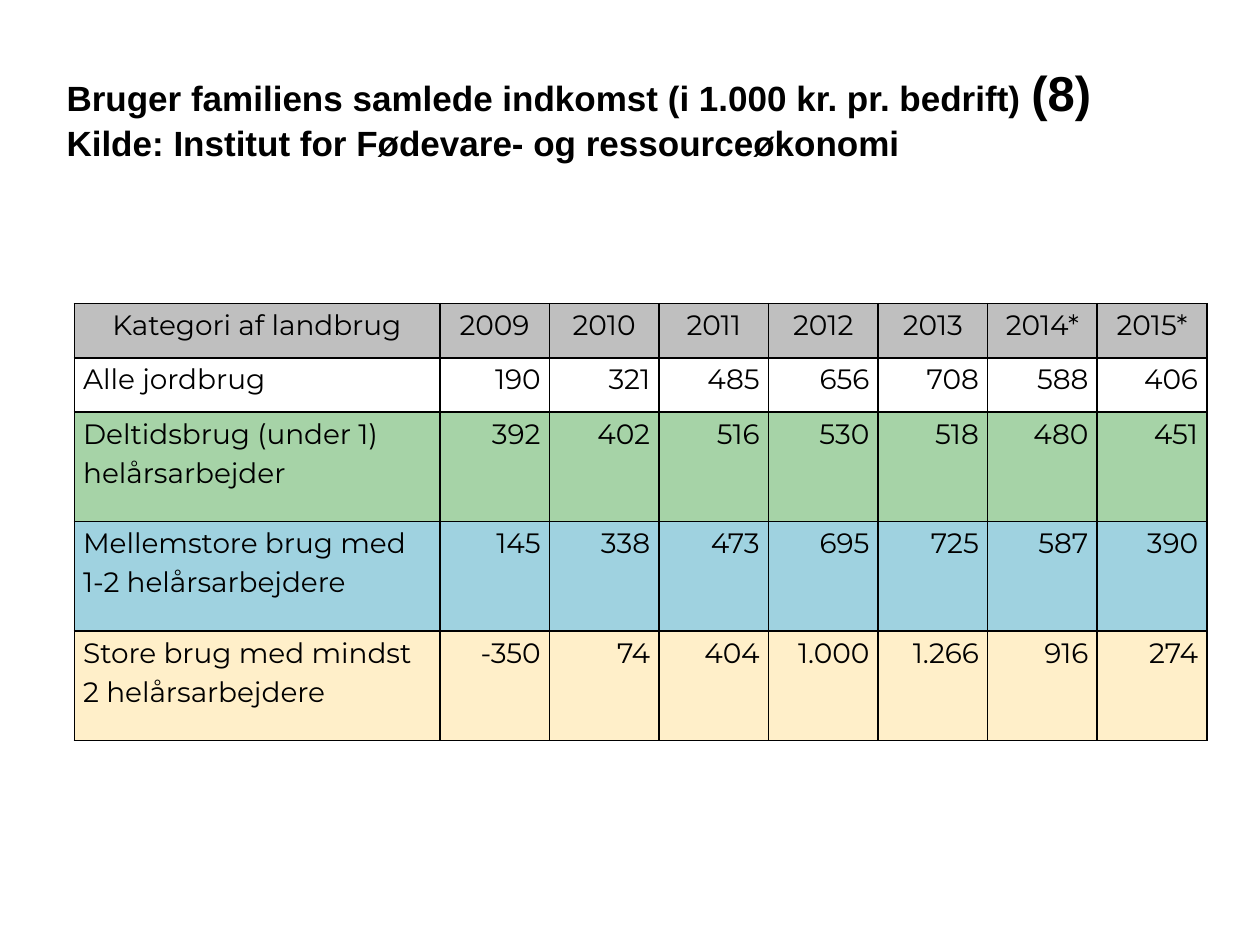
from lxml.etree import SubElement
from pptx import Presentation
from pptx.dml.color import RGBColor
from pptx.enum.text import MSO_ANCHOR, PP_ALIGN
from pptx.oxml.ns import qn
from pptx.util import Inches, Pt

BLACK = RGBColor(0x00, 0x00, 0x00)
GREY = RGBColor(0xBF, 0xBF, 0xBF)
GREEN = RGBColor(0xA6, 0xD3, 0xA7)
BLUE = RGBColor(0x9F, 0xD2, 0xE0)
CREAM = RGBColor(0xFF, 0xEF, 0xC9)

# Row height, fill, cell texts
INCOME_ROWS = [
    (0.43, GREY, ["Kategori af landbrug", "2009", "2010", "2011", "2012", "2013", "2014*", "2015*"]),
    (0.43, None, ["Alle jordbrug", "190", "321", "485", "656", "708", "588", "406"]),
    (0.87, GREEN, ["Deltidsbrug (under 1) helårsarbejder",
                   "392", "402", "516", "530", "518", "480", "451"]),
    (0.87, BLUE, ["Mellemstore brug med 1-2 helårsarbejdere",
                  "145", "338", "473", "695", "725", "587", "390"]),
    (0.87, CREAM, ["Store brug med mindst 2 helårsarbejdere",
                   "-350", "74", "404", "1.000", "1.266", "916", "274"]),
]
CATEGORY_WIDTH, YEAR_WIDTH = 2.9, 0.87


def add_borders(cell):
    """Draw a 1 pt black line on all four sides; call before setting the fill."""
    properties = cell._tc.get_or_add_tcPr()
    for side in ("a:lnL", "a:lnR", "a:lnT", "a:lnB"):
        line = SubElement(properties, qn(side), w=str(Pt(1)))
        SubElement(SubElement(line, qn("a:solidFill")), qn("a:srgbClr"), val=str(BLACK))


prs = Presentation()
prs.slide_width, prs.slide_height = Inches(10), Inches(7.5)
slide = prs.slides.add_slide(prs.slide_layouts[6])

year_count = len(INCOME_ROWS[0][2]) - 1
table = slide.shapes.add_table(
    len(INCOME_ROWS), year_count + 1, Inches(0.59), Inches(2.41),
    Inches(CATEGORY_WIDTH + year_count * YEAR_WIDTH),
    Inches(sum(height for height, _, _ in INCOME_ROWS))).table
table.first_row = table.horz_banding = False
for c, column in enumerate(table.columns):
    column.width = Inches(YEAR_WIDTH if c else CATEGORY_WIDTH)

for r, (height, fill, texts) in enumerate(INCOME_ROWS):
    table.rows[r].height = Inches(height)
    for c, text in enumerate(texts):
        cell = table.cell(r, c)
        cell.margin_left = cell.margin_right = Inches(0.07)
        cell.margin_top = cell.margin_bottom = 0
        add_borders(cell)
        if fill is None:
            cell.fill.background()
        else:
            cell.fill.solid()
            cell.fill.fore_color.rgb = fill
        paragraph = cell.text_frame.paragraphs[0]
        paragraph.text = text
        paragraph.line_spacing = 1.15
        if r == 0:
            paragraph.alignment = PP_ALIGN.CENTER
        else:
            paragraph.alignment = PP_ALIGN.RIGHT if c else PP_ALIGN.LEFT
        paragraph.font.name = "Montserrat"
        paragraph.font.size = Pt(16)
        paragraph.font.color.rgb = BLACK

heading = slide.shapes.add_textbox(Inches(0.43), Inches(0.44), Inches(9.13), Inches(1.14)).text_frame
heading.word_wrap = True
heading.vertical_anchor = MSO_ANCHOR.MIDDLE
heading.margin_bottom = Inches(0.27)
title = heading.paragraphs[0]
title.text = "Bruger familiens samlede indkomst (i 1.000 kr. pr. bedrift) "
number = title.add_run()
number.text = "(8)"
number.font.size = Pt(28)
source = heading.add_paragraph()
source.text = "Kilde: Institut for Fødevare- og ressourceøkonomi"
for paragraph in (title, source):
    paragraph.alignment = PP_ALIGN.JUSTIFY
    paragraph.font.name = "Arial"
    paragraph.font.size = Pt(20)
    paragraph.font.bold = True
    paragraph.font.color.rgb = BLACK

prs.save("out.pptx")
